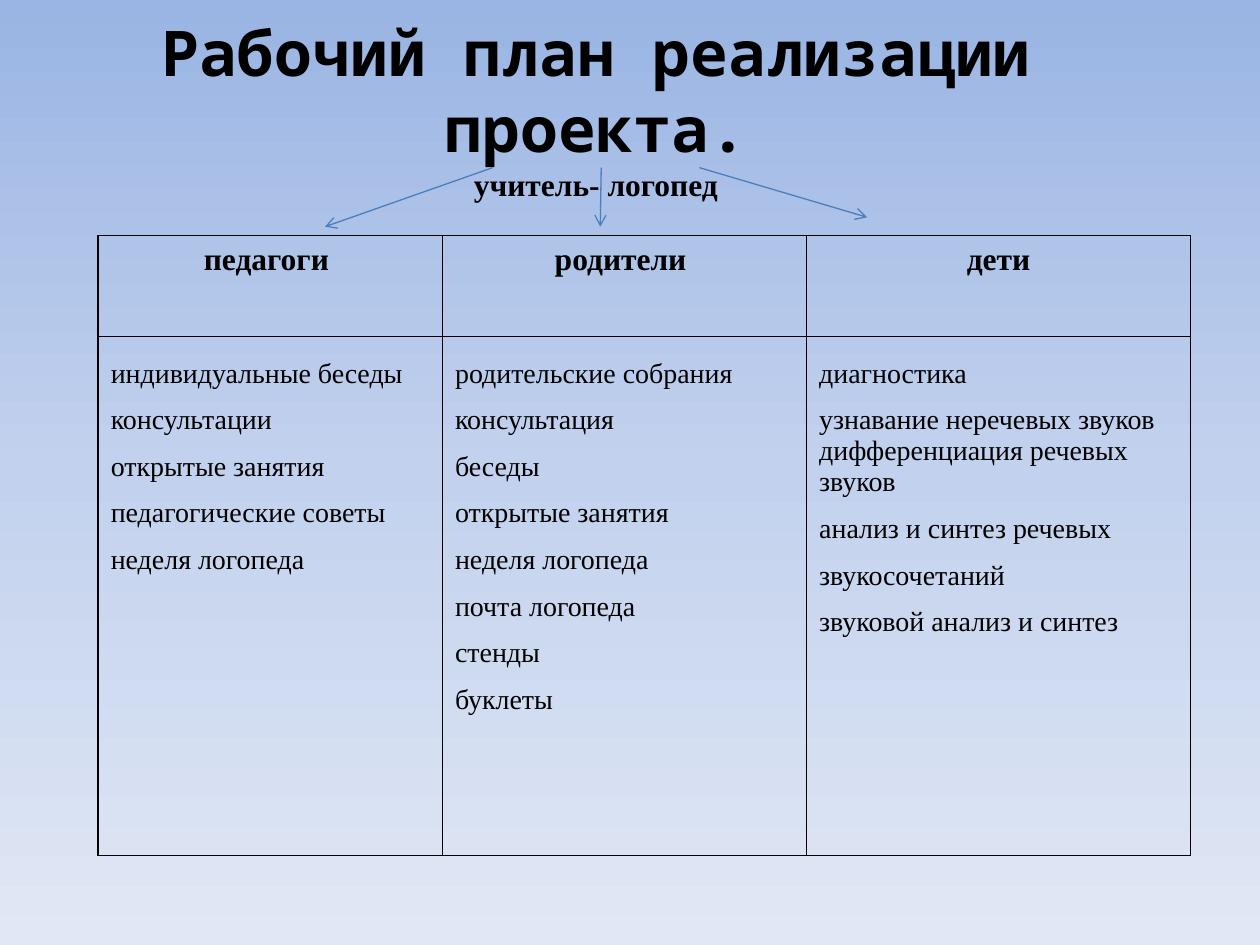
from copy import deepcopy
from pptx import Presentation
from pptx.dml.color import RGBColor
from pptx.enum.shapes import MSO_CONNECTOR
from pptx.enum.text import MSO_ANCHOR, PP_ALIGN
from pptx.oxml.ns import qn
from pptx.util import Cm, Pt
from lxml.etree import SubElement

BLACK = RGBColor(0x00, 0x00, 0x00)
BLUE = RGBColor(0x4B, 0x7E, 0xBC)
SKY = [RGBColor(0x9A, 0xB5, 0xE4), RGBColor(0xC2, 0xD1, 0xED), RGBColor(0xE1, 0xE8, 0xF5)]
SERIF = "Times New Roman"
MONO = "Noto Sans Mono"
HEADS = ["педагоги ", "родители ", "дети"]
LISTS = [
    ["индивидуальные беседы", "консультации", "открытые занятия",
     "педагогические советы", "неделя логопеда"],
    ["родительские собрания", "консультация", "беседы", "открытые занятия",
     "неделя логопеда", "почта логопеда", "стенды", "буклеты"],
    ["диагностика", "узнавание неречевых звуков", "дифференциация речевых звуков",
     "анализ и синтез речевых звукосочетаний", "звуковой анализ и синтез"],
]
TIGHT = "дифференциация речевых звуков"


def write(frame, text, size=16, font=SERIF, bold=False, align=PP_ALIGN.LEFT, space=1.0):
    """Add one formatted paragraph to a text frame."""
    para = frame.paragraphs[0] if not frame.text else frame.add_paragraph()
    para.alignment, para.line_spacing = align, space
    run = para.add_run()
    run.text = text
    run.font.size, run.font.name, run.font.bold = Pt(size), font, bold
    run.font.color.rgb = BLACK


def paint(slide):
    """Fill the background with a vertical gradient."""
    fill = slide.background.fill
    fill.gradient()
    fill.gradient_angle = 270
    stops = slide.element.find(".//" + qn("a:gsLst"))
    stops.insert(1, deepcopy(stops[0]))
    for stop, color, place in zip(fill.gradient_stops, SKY, (0, 0.5, 1)):
        stop.color.rgb, stop.position = color, place


def title(slide, left, top, width, height):
    """Place the heading and the role below it."""
    frame = slide.shapes.add_textbox(Cm(left), Cm(top), Cm(width), Cm(height)).text_frame
    frame.word_wrap, frame.vertical_anchor = True, MSO_ANCHOR.TOP
    write(frame, "Рабочий план реализации проекта.", size=36, font=MONO, bold=True,
          align=PP_ALIGN.CENTER)
    write(frame, "учитель- логопед", size=18, bold=True, align=PP_ALIGN.CENTER)


def edge(cell):
    """Draw thin black borders around a clear cell."""
    props = cell._tc.get_or_add_tcPr()
    for side in ("a:lnL", "a:lnR", "a:lnT", "a:lnB"):
        line = SubElement(props, qn(side), w=str(Pt(1)))
        fill = SubElement(line, qn("a:solidFill"))
        SubElement(fill, qn("a:srgbClr"), val=str(BLACK))
    cell.fill.background()


def plan(slide, left, top, widths, heights):
    """Place the table of work with each group."""
    table = slide.shapes.add_table(2, 3, Cm(left), Cm(top), Cm(sum(widths)),
                                   Cm(sum(heights))).table
    table.first_row = table.horz_banding = False
    for row, height in zip(table.rows, heights):
        row.height = Cm(height)
    for col, (width, head, items) in enumerate(zip(widths, HEADS, LISTS)):
        table.columns[col].width = Cm(width)
        top_cell, low_cell = table.cell(0, col), table.cell(1, col)
        write(top_cell.text_frame, head, size=18, bold=True, align=PP_ALIGN.CENTER)
        for item in items:
            write(low_cell.text_frame, item, space=1.0 if item == TIGHT else 1.5)
        edge(top_cell)
        edge(low_cell)


def arrows(slide, left, top, ends):
    """Draw the arrows that fan out from the role to the groups."""
    for start, stop, drop in ends:
        line = slide.shapes.add_connector(MSO_CONNECTOR.STRAIGHT, Cm(left + start), Cm(top),
                                          Cm(left + stop), Cm(top + drop))
        line.line.color.rgb, line.line.width = BLUE, Pt(0.75)
        SubElement(line.line._get_or_add_ln(), qn("a:tailEnd"), type="arrow")
        SubElement(line._element.spPr, qn("a:effectLst"))


def main():
    """Build and save the slide."""
    deck = Presentation()
    deck.slide_width, deck.slide_height = Cm(25.4), Cm(19.05)
    slide = deck.slides.add_slide(deck.slide_layouts[6])
    paint(slide)
    title(slide, 1.4, 0.15, 21.23, 4.1)
    plan(slide, 1.98, 4.75, [6.94, 7.34, 7.74], [2.03, 10.47])
    arrows(slide, 6.55, 3.38, [(5.57, 5.55, 1.19), (3.38, 0, 1.19), (7.55, 10.93, 1)])
    deck.save("out.pptx")


if __name__ == "__main__":
    main()
